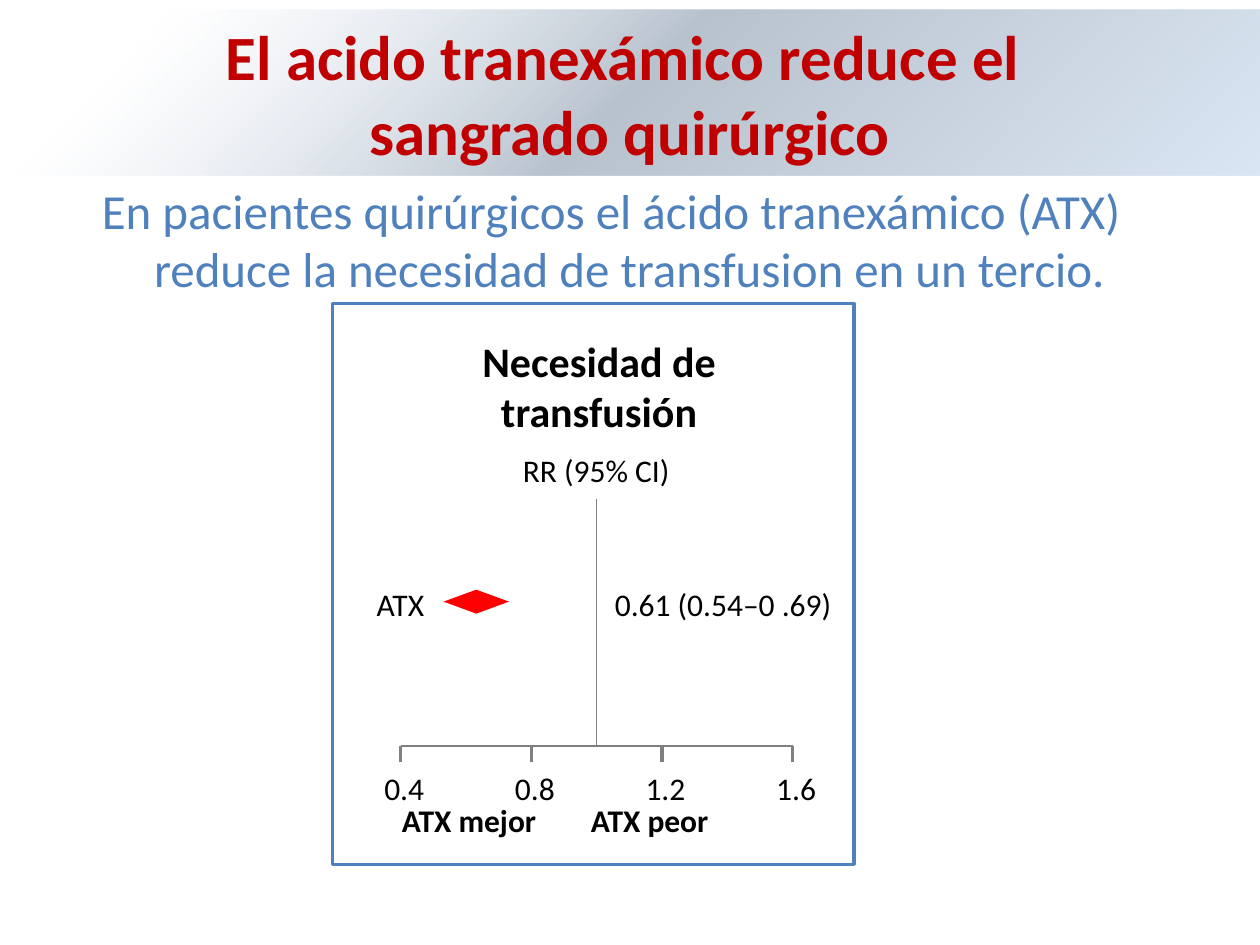
"""Build a slide with a forest plot of tranexamic acid and the need for transfusion."""
from lxml import etree
from pptx import Presentation
from pptx.dml.color import RGBColor
from pptx.enum.shapes import MSO_CONNECTOR, MSO_SHAPE
from pptx.enum.text import PP_ALIGN
from pptx.oxml.ns import qn
from pptx.util import Inches, Pt

LEFT, CENTER = PP_ALIGN.LEFT, PP_ALIGN.CENTER
STRAIGHT = MSO_CONNECTOR.STRAIGHT
RECTANGLE, DIAMOND = MSO_SHAPE.RECTANGLE, MSO_SHAPE.DIAMOND

COLORS = {"blue": "4F81BD", "title": "C00000", "text": "000000",
          "axis": "808080", "effect": "FF0000"}
BANNER_STOPS = [(12, "DCE6F2", 0), (50, "B8C2CD", 100), (100, "DAE6F3", 100)]

TITLE = "El acido tranexámico reduce el \vsangrado quirúrgico"
MESSAGE = ("En pacientes quirúrgicos el ácido tranexámico (ATX) "
           "reduce la necesidad de transfusion en un tercio.")
TICKS = ["0.4", "0.8", "1.2", "1.6"]
AXIS = {"left": 3.18, "right": 6.29, "y": 5.92, "tick": 0.13, "top": 3.96}

NONE, PADDED, NORMAL = (0, 0), (0.12, 0.06), (0.1, 0.05)
LABELS = [
    ("ATX", (2.87, 4.58, 0.74, 0.42), PADDED, True, {}),
    ("ATX mejor\tATX peor", (3.19, 6.36, 3.04, 0.3), NONE, False, {"bold": True}),
    ("0.61 (0.54–0 .69)", (4.76, 4.58, 2.37, 0.42), PADDED, True, {}),
    ("RR (95% CI)", (4.03, 3.52, 1.41, 0.42), PADDED, False, {}),
    ("Necesidad de transfusión", (3.04, 2.66, 3.43, 0.81), NONE, True,
     {"size": Pt(24), "bold": True, "align": CENTER}),
]


def rgb(name):
    return RGBColor.from_string(COLORS[name])


def write(shape, text, insets, wrap=True, color="text", align=LEFT, **style):
    frame = shape.text_frame
    across, down = Inches(insets[0]), Inches(insets[1])
    layout = {"margin_left": across, "margin_right": across,
              "margin_top": down, "margin_bottom": down, "word_wrap": wrap}
    for name, value in layout.items():
        setattr(frame, name, value)
    frame.text = text
    para = frame.paragraphs[0]
    para.alignment = align
    for span in para.runs:
        for name, value in {"name": "Calibri", "size": Pt(18), **style}.items():
            setattr(span.font, name, value)
        span.font.color.rgb = rgb(color)
    return para


def add_text(page, text, place, insets, wrap=True, **style):
    box = page.shapes.add_textbox(*map(Inches, place))
    return write(box, text, insets, wrap, **style)


def add_line(page, start, end, width):
    line = page.shapes.add_connector(STRAIGHT, *map(Inches, start + end))
    line.line.color.rgb = rgb("axis")
    line.line.width = Pt(width)
    etree.SubElement(line.element.spPr, qn("a:effectLst"))


def add_shape(page, kind, place):
    shape = page.shapes.add_shape(kind, *map(Inches, place))
    shape.shadow.inherit = False
    shape.fill.background()
    shape.line.fill.background()
    return shape


def fill_banner(shape):
    shape.fill.gradient()
    shape.fill.gradient_angle = 315
    stops = shape.element.spPr.find(".//" + qn("a:gsLst"))
    for stop in list(stops):
        stops.remove(stop)
    for position, color, opacity in BANNER_STOPS:
        stop = etree.SubElement(stops, qn("a:gs"), pos=str(position * 1000))
        paint = etree.SubElement(stop, qn("a:srgbClr"), val=color)
        etree.SubElement(paint, qn("a:alpha"), val=str(opacity * 1000))


def add_axis(page):
    left, right, y = AXIS["left"], AXIS["right"], AXIS["y"]
    middle = (left + right) / 2
    step = (right - left) / (len(TICKS) - 1)
    add_line(page, (left, y), (right, y), 1)
    add_line(page, (middle, y), (middle, AXIS["top"]), 1)
    for index, label in enumerate(TICKS):
        x = left + index * step
        add_line(page, (x, y + AXIS["tick"]), (x, y), 0)
        add_text(page, label, (x - 0.13, 6.1, 0.32, 0.3), NONE, False)


def main():
    deck = Presentation()
    deck.slide_width, deck.slide_height = Inches(10), Inches(7.5)
    page = deck.slides.add_slide(deck.slide_layouts[6])

    para = add_text(page, MESSAGE, (0.28, 1.38, 9.14, 1.04), NORMAL,
                    color="blue", align=CENTER, size=Pt(28))
    para.space_after = Pt(18)
    indent = Inches(0.29)
    for name, value in {"marL": indent, "indent": -indent}.items():
        para._p.get_or_add_pPr().set(name, str(value))

    add_axis(page)
    for text, place, insets, wrap, style in LABELS:
        add_text(page, text, place, insets, wrap, **style)

    effect = add_shape(page, DIAMOND, (3.52, 4.68, 0.52, 0.19))
    effect.fill.solid()
    effect.fill.fore_color.rgb = rgb("effect")

    border = add_shape(page, RECTANGLE, (2.64, 2.41, 4.14, 4.45))
    border.line.color.rgb = rgb("blue")
    border.line.width = Pt(2)

    banner = add_shape(page, RECTANGLE, (0, 0.08, 10, 1.31))
    fill_banner(banner)
    write(banner, TITLE, NORMAL, color="title", align=CENTER, size=Pt(36), bold=True)
    deck.save("out.pptx")


if __name__ == "__main__":
    main()
